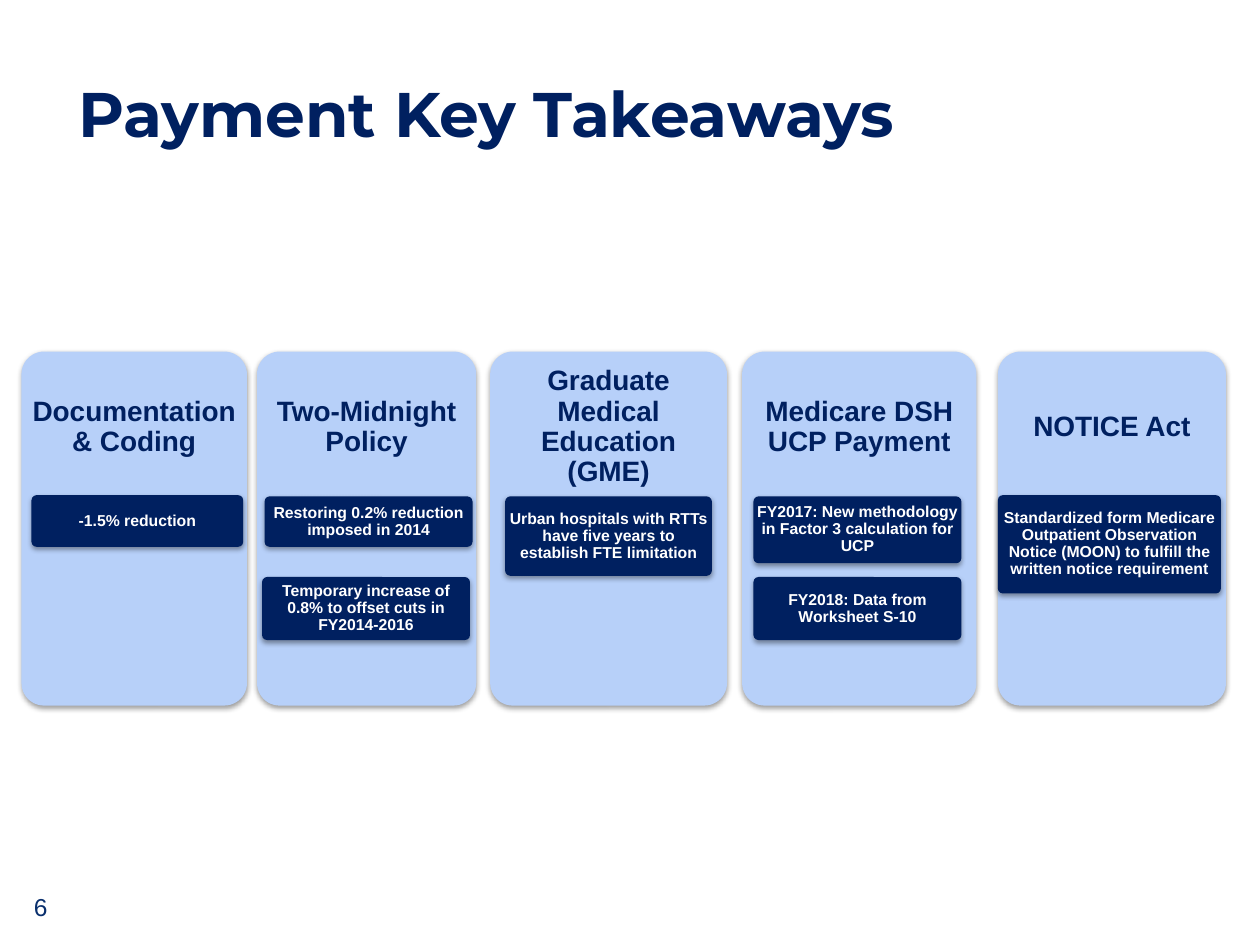
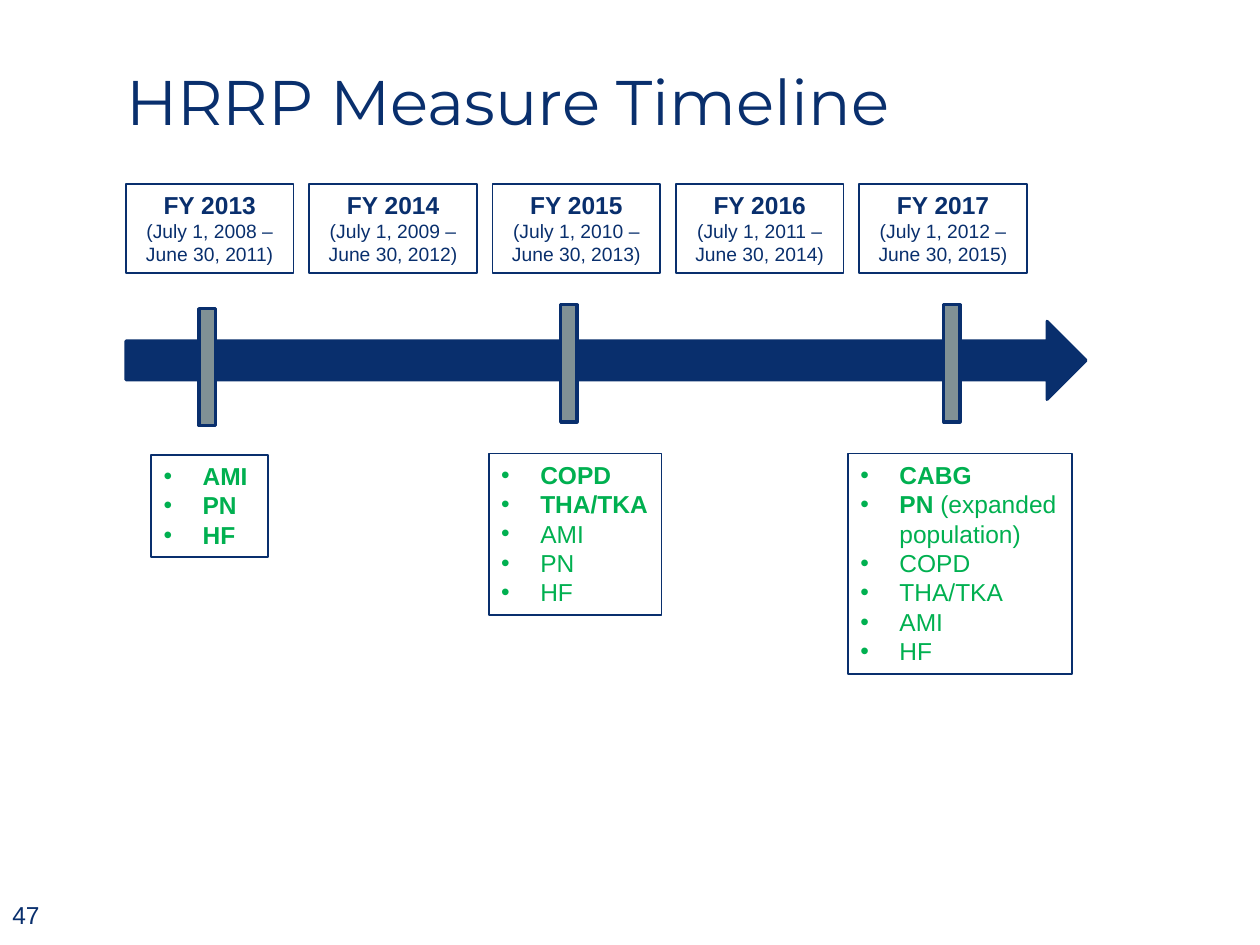
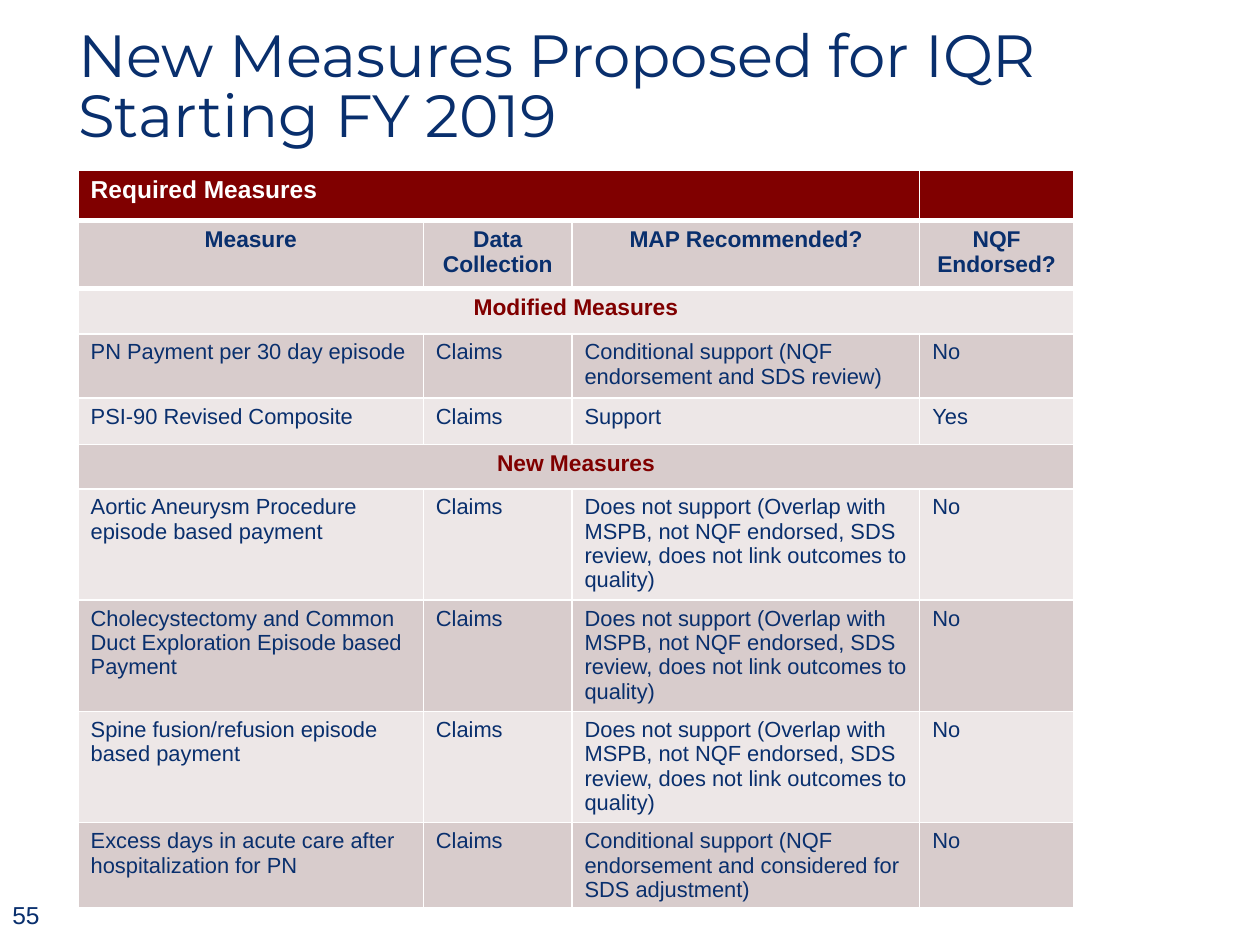
from pptx import Presentation
from pptx.dml.color import RGBColor
from pptx.enum.shapes import MSO_SHAPE
from pptx.enum.text import MSO_ANCHOR, MSO_AUTO_SIZE, PP_ALIGN
from pptx.oxml import parse_xml
from pptx.oxml.ns import nsdecls, qn
from pptx.util import Inches, Pt

NAVY, DEEP, WHITE = "092F6D", "002060", "FFFFFF"
SKY, GREY, GREEN = "B7D0F9", "809195", "00B050"
RED, DARK, LIGHT = "800000", "D8CCCC", "EDE7E7"
LEFT, MID = PP_ALIGN.LEFT, PP_ALIGN.CENTER


def style(par, size, tone, bold=False, align=LEFT, face="Arial"):
    par.alignment = align
    font = par.font
    font.name, font.size, font.bold = face, Pt(size), bold
    font.color.rgb = RGBColor.from_string(tone)


def block(slide, kind, box, fill=None, edge=None, width=1):
    shape = slide.shapes.add_shape(kind, *map(Inches, box))
    shape.shadow.inherit = False
    if fill:
        shape.fill.solid()
        shape.fill.fore_color.rgb = RGBColor.from_string(fill)
    else:
        shape.fill.background()
    if edge:
        shape.line.color.rgb = RGBColor.from_string(edge)
        shape.line.width = Pt(width)
    else:
        shape.line.fill.background()
    shape.text_frame.word_wrap = True
    shape.text_frame.vertical_anchor = MSO_ANCHOR.TOP
    return shape


deck = Presentation()
deck.slide_width, deck.slide_height = Inches(10), Inches(7.5)

heads = [
    ("Payment Key Takeaways", 0.62, 0.51, 36, DEEP, True, "6", (0.17, 7.05, 2.25, 0.3)),
    ("HRRP Measure Timeline", 1, 0.42, 36, NAVY, False, "47", (0, 7.06, 2.33, 0.4)),
    ("New Measures Proposed for IQR Starting FY 2019", 0.62, 0.51, 34, NAVY, False,
     "55", (0, 7.06, 2.33, 0.4)),
]
slides = []
for text, left, top, size, tone, bold, page, spot in heads:
    slide = deck.slides.add_slide(deck.slide_layouts[5])
    title = slide.shapes.title
    title.left, title.top = Inches(left), Inches(top)
    title.width, title.height = Inches(9.17), Inches(0.68)
    frame = title.text_frame
    frame.text = text
    frame.word_wrap = True
    frame.auto_size = MSO_AUTO_SIZE.NONE
    frame.vertical_anchor = MSO_ANCHOR.BOTTOM
    frame.margin_left = frame.margin_right = frame.margin_top = frame.margin_bottom = 0
    frame.paragraphs[0].line_spacing = 0.85
    style(frame.paragraphs[0], size, tone, bold, face="Montserrat")
    frame = slide.shapes.add_textbox(*map(Inches, spot)).text_frame
    frame.text = page
    frame.word_wrap = True
    frame.vertical_anchor = MSO_ANCHOR.MIDDLE
    style(frame.paragraphs[0], 14, NAVY)
    slides.append(slide)
pay, time, grid = slides

cards = [
    ("Documentation & Coding", 0.17, 1.79,
     [("-1.5% reduction", (0.25, 3.93, 1.68, 0.41))]),
    ("Two-Midnight Policy", 2.04, 1.74,
     [("Restoring 0.2% reduction imposed in 2014", (2.1, 3.94, 1.65, 0.4)),
      ("Temporary increase of 0.8% to offset cuts in FY2014-2016", (2.08, 4.58, 1.65, 0.5))]),
    ("Graduate Medical Education (GME)", 3.89, 1.88,
     [("Urban hospitals with RTTs have five years to establish FTE limitation",
       (4.01, 3.94, 1.64, 0.63))]),
    ("Medicare DSH UCP Payment", 5.89, 1.86,
     [("FY2017: New methodology in Factor 3 calculation for UCP", (5.98, 3.94, 1.65, 0.53)),
      ("FY2018: Data from Worksheet S-10", (5.98, 4.58, 1.65, 0.5))]),
    ("NOTICE Act", 7.92, 1.81,
     [("Standardized form Medicare Outpatient Observation Notice (MOON) to fulfill "
       "the written notice requirement", (7.92, 3.93, 1.77, 0.78))]),
]
for head, left, width, notes in cards:
    parts = [(head, (left, 2.79, width, 2.81), SKY, 16, DEEP, 0.18, 0.02, 0.08, 1.69)]
    parts += [(note, box, DEEP, 9, WHITE, 0.04, 0.01, 0.03, 0.03) for note, box in notes]
    for text, box, fill, size, tone, curve, side, top, base in parts:
        shape = block(pay, MSO_SHAPE.ROUNDED_RECTANGLE, box, fill)
        shape.adjustments[0] = curve / min(box[2:])
        shape._element.spPr.find(qn("a:effectLst")).append(parse_xml(
            f'<a:outerShdw {nsdecls("a")} blurRad="{Pt(3.1)}" dist="{Pt(1.6)}" dir="5400000" '
            'rotWithShape="0"><a:srgbClr val="000000"><a:alpha val="38000"/></a:srgbClr>'
            '</a:outerShdw>'))
        frame = shape.text_frame
        frame.text = text
        frame.vertical_anchor = MSO_ANCHOR.MIDDLE
        frame.margin_left = frame.margin_right = Inches(side)
        frame.margin_top, frame.margin_bottom = Inches(top), Inches(base)
        frame.paragraphs[0].line_spacing = 0.9
        style(frame.paragraphs[0], size, tone, True, MID)

block(time, MSO_SHAPE.RIGHT_ARROW, (1, 2.55, 7.62, 0.62), NAVY, NAVY, 1.75)
for left, top in [(1.58, 2.45), (4.45, 2.42), (7.49, 2.42)]:
    block(time, MSO_SHAPE.RECTANGLE, (left, top, 0.13, 0.93), GREY, NAVY, 1.75)

for i in range(5):
    box = (1 + 5.82 * i / 4, 1.46, 1.33, 0.71)
    frame = block(time, MSO_SHAPE.RECTANGLE, box, edge=NAVY).text_frame
    frame.text = f"FY {2013 + i}\n(July 1, {2008 + i} – June 30, {2011 + i})"
    style(frame.paragraphs[0], 14, NAVY, True, MID)
    style(frame.paragraphs[1], 11, NAVY, False, MID)

lists = [
    ((1.2, 3.61, 0.93, 0.81), ["AMI", "PN", "HF"], []),
    ((3.88, 3.6, 1.37, 1.28), ["COPD", "THA/TKA"], ["AMI", "PN", "HF"]),
    ((6.73, 3.6, 1.78, 1.75), ["CABG", "PN"], ["COPD", "THA/TKA", "AMI", "HF"]),
]
for box, fresh, kept in lists:
    frame = block(time, MSO_SHAPE.RECTANGLE, box, edge=NAVY).text_frame
    frame.margin_right = Inches(0.05)
    frame.text = "\n".join(fresh + kept)
    for i, par in enumerate(frame.paragraphs):
        props = par._p.get_or_add_pPr()
        props.set("marL", str(Inches(0.31)))
        props.set("indent", str(Inches(-0.31)))
        props.append(parse_xml(f'<a:buFont {nsdecls("a")} typeface="Arial"/>'))
        props.append(parse_xml(f'<a:buChar {nsdecls("a")} char="•"/>'))
        style(par, 14, GREEN, i < len(fresh))
run = frame.paragraphs[1].add_run()
run.text = " (expanded population)"
run.font.bold = False

oppose = ("Does not support (Overlap with MSPB, not NQF endorsed, SDS review, "
          "does not link outcomes to quality)")
rows = [
    ["Required Measures", "", "", ""],
    ["Measure", "Data Collection", "MAP Recommended?", "NQF Endorsed?"],
    ["Modified Measures", "", "", ""],
    ["PN Payment per 30 day episode", "Claims",
     "Conditional support (NQF endorsement and SDS review)", "No"],
    ["PSI-90 Revised Composite", "Claims", "Support", "Yes"],
    ["New Measures", "", "", ""],
    ["Aortic Aneurysm Procedure episode based payment", "Claims", oppose, "No"],
    ["Cholecystectomy and Common Duct Exploration Episode based Payment", "Claims", oppose, "No"],
    ["Spine fusion/refusion episode based payment", "Claims", oppose, "No"],
    ["Excess days in acute care after hospitalization for PN", "Claims",
     "Conditional support (NQF endorsement and considered for SDS adjustment)", "No"],
]
wide = [2.74, 1.18, 2.76, 1.22]
tall = [0.4, 0.54, 0.36, 0.51, 0.37, 0.35, 0.87, 0.87, 0.87, 0.67]
spot = (0.62, 1.35, sum(wide), sum(tall))
table = grid.shapes.add_table(len(rows), len(wide), *map(Inches, spot)).table
for col, width in zip(table.columns, wide):
    col.width = Inches(width)
for r, row in enumerate(rows):
    table.rows[r].height = Inches(tall[r])
    if r == 0:
        fill, look = RED, (14, WHITE, True)
    else:
        fill = DARK if r % 2 else LIGHT
        if r == 1:
            look = (13, NAVY, True, MID)
        elif r in (2, 5):
            look = (13, RED, True, MID)
        else:
            look = (12.5, NAVY)
    for c, text in enumerate(row):
        cell = table.cell(r, c)
        cell.fill.solid()
        cell.fill.fore_color.rgb = RGBColor.from_string(fill)
        cell.margin_bottom = 0
        cell.text = text
        style(cell.text_frame.paragraphs[0], *look)
        if r < 2:
            side = "lnT" if r else "lnB"
            cell._tc.get_or_add_tcPr().insert(0, parse_xml(
                f'<a:{side} {nsdecls("a")} w="{Pt(3)}"><a:solidFill>'
                f'<a:srgbClr val="{WHITE}"/></a:solidFill></a:{side}>'))
for r, last in [(0, 2), (2, 3), (5, 3)]:
    table.cell(r, 0).merge(table.cell(r, last))

deck.save("out.pptx")
